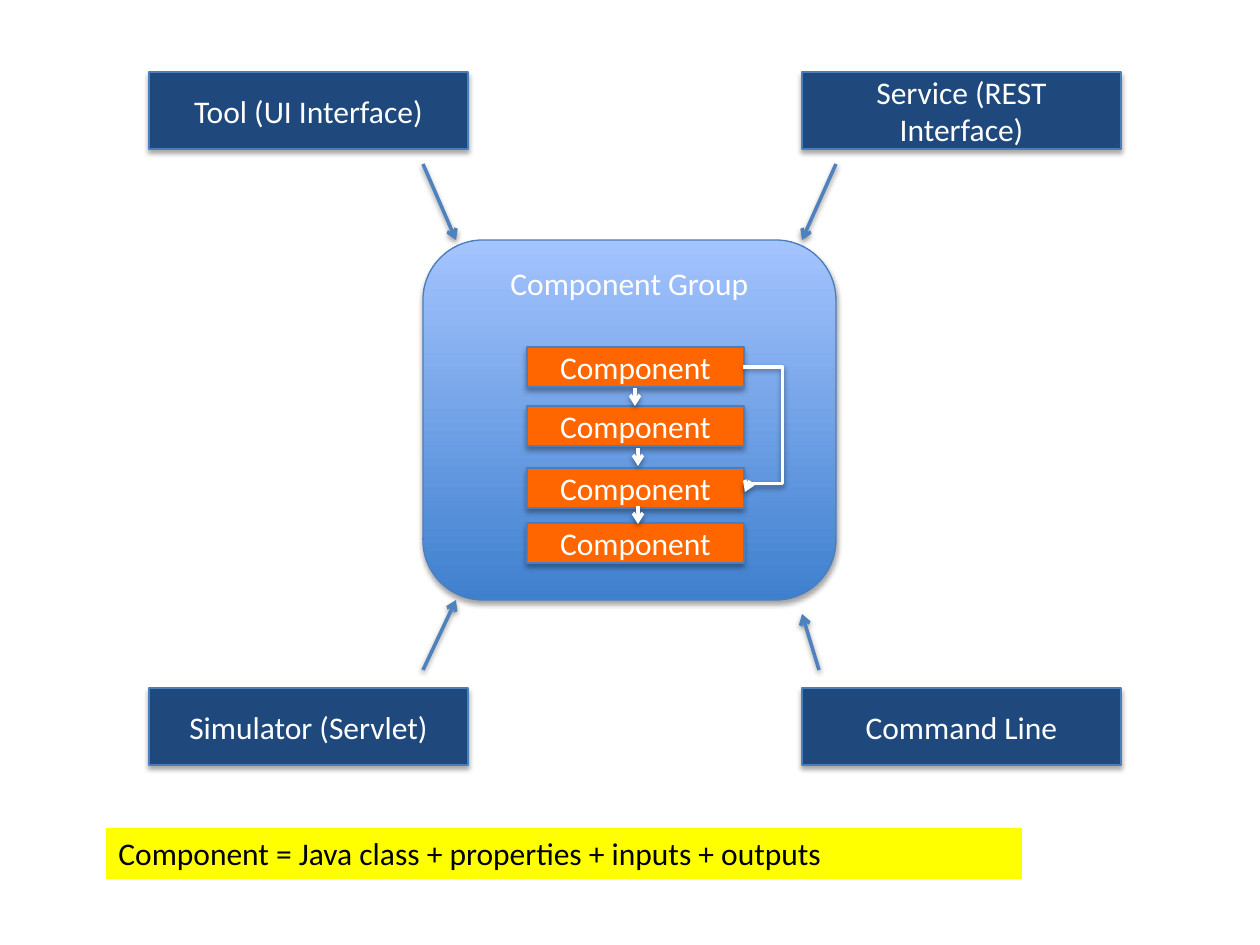
from lxml.etree import SubElement
from pptx import Presentation
from pptx.dml.color import RGBColor
from pptx.enum.shapes import MSO_CONNECTOR, MSO_SHAPE
from pptx.enum.text import MSO_ANCHOR, MSO_AUTO_SIZE, PP_ALIGN
from pptx.oxml.ns import qn
from pptx.util import Emu, Pt

EMU_PER_PX = 914400 / 126

WHITE = RGBColor(0xFF, 0xFF, 0xFF)
BLACK = RGBColor(0x00, 0x00, 0x00)
NAVY = RGBColor(0x1F, 0x49, 0x7D)
ORANGE = RGBColor(0xFF, 0x66, 0x00)
YELLOW = RGBColor(0xFF, 0xFF, 0x00)
OUTLINE_BLUE = RGBColor(0x4B, 0x7E, 0xBC)
ARROW_BLUE = RGBColor(0x4F, 0x81, 0xBD)
GROUP_BOTTOM = RGBColor(0x3F, 0x80, 0xCE)
GROUP_TOP = RGBColor(0xA4, 0xC4, 0xFF)


def px(length):
    return Emu(round(length * EMU_PER_PX))


def add_shadow(shape, distance, opacity):
    effects = SubElement(shape._element.spPr, qn("a:effectLst"))
    shadow = SubElement(
        effects, qn("a:outerShdw"), blurRad=str(Pt(3.1)), dist=str(Pt(distance)),
        dir="5400000", rotWithShape="0",
    )
    color = SubElement(shadow, qn("a:srgbClr"), val=str(BLACK))
    SubElement(color, qn("a:alpha"), val=str(opacity * 1000))


def set_text(shape, text, color, alignment, anchor):
    frame = shape.text_frame
    frame.word_wrap = True
    frame.vertical_anchor = anchor
    frame.text = text
    paragraph = frame.paragraphs[0]
    paragraph.alignment = alignment
    paragraph.font.name = "Calibri"
    paragraph.font.size = Pt(18)
    paragraph.font.color.rgb = color


def add_box(slide, kind, bounds, text, fill_color=None, anchor=MSO_ANCHOR.MIDDLE):
    shape = slide.shapes.add_shape(kind, *map(px, bounds))
    if fill_color is not None:
        shape.fill.solid()
        shape.fill.fore_color.rgb = fill_color
    shape.line.color.rgb = OUTLINE_BLUE
    shape.line.width = Pt(0.75)
    add_shadow(shape, 1.8, 35)
    set_text(shape, text, WHITE, PP_ALIGN.CENTER, anchor)
    return shape


def add_component_group(slide):
    group = add_box(slide, MSO_SHAPE.ROUNDED_RECTANGLE, (423, 240, 413, 360),
                    "Component Group", anchor=MSO_ANCHOR.TOP)
    group.fill.gradient()
    group.fill.gradient_angle = 90
    for stop, color in zip(group.fill.gradient_stops, (GROUP_BOTTOM, GROUP_TOP)):
        stop.color.rgb = color


def add_arrow(slide, start, end, color, kind=MSO_CONNECTOR.STRAIGHT):
    arrow = slide.shapes.add_connector(kind, *map(px, start + end))
    arrow.line.color.rgb = color
    arrow.line.width = Pt(2)
    SubElement(arrow.line._get_or_add_ln(), qn("a:tailEnd"), type="arrow")
    add_shadow(arrow, 1.6, 38)
    return arrow


def add_bypass_arrow(slide):
    arrow = add_arrow(slide, (743, 367), (745, 492), WHITE, MSO_CONNECTOR.ELBOW)
    geometry = arrow._element.spPr.find(qn("a:prstGeom"))
    geometry.set("prst", "bentConnector4")
    guides = geometry.find(qn("a:avLst"))
    if guides is None:
        guides = SubElement(geometry, qn("a:avLst"))
    for name, value in (("adj1", 2000000), ("adj2", 93100)):
        SubElement(guides, qn("a:gd"), name=name, fmla=f"val {value}")


def add_definition(slide, text):
    box = slide.shapes.add_textbox(*map(px, (106, 828, 916, 51)))
    box.fill.solid()
    box.fill.fore_color.rgb = YELLOW
    set_text(box, text, BLACK, PP_ALIGN.LEFT, MSO_ANCHOR.TOP)
    box.text_frame.auto_size = MSO_AUTO_SIZE.SHAPE_TO_FIT_TEXT


def main():
    presentation = Presentation()
    presentation.slide_width = px(1260)
    presentation.slide_height = px(945)
    slide = presentation.slides.add_slide(presentation.slide_layouts[6])

    add_component_group(slide)
    for top in (347, 406, 468, 523):
        add_box(slide, MSO_SHAPE.RECTANGLE, (527, top, 217, 40), "Component", ORANGE)

    for left, top, text in (
        (149, 72, "Tool (UI Interface)"),
        (802, 72, "Service (REST Interface)"),
        (149, 688, "Simulator (Servlet)"),
        (802, 688, "Command Line"),
    ):
        add_box(slide, MSO_SHAPE.RECTANGLE, (left, top, 319, 77), text, NAVY)

    for start, end in (
        ((423, 164), (456, 240)),
        ((836, 164), (802, 240)),
        ((423, 670), (456, 600)),
        ((819, 670), (802, 614)),
    ):
        add_arrow(slide, start, end, ARROW_BLUE)

    for x, top in ((635, 388), (638, 448), (638, 506)):
        add_arrow(slide, (x, top), (x, top + 18), WHITE)

    add_definition(slide, "Component = Java class + properties + inputs + outputs")
    add_bypass_arrow(slide)
    presentation.save("out.pptx")


if __name__ == "__main__":
    main()
